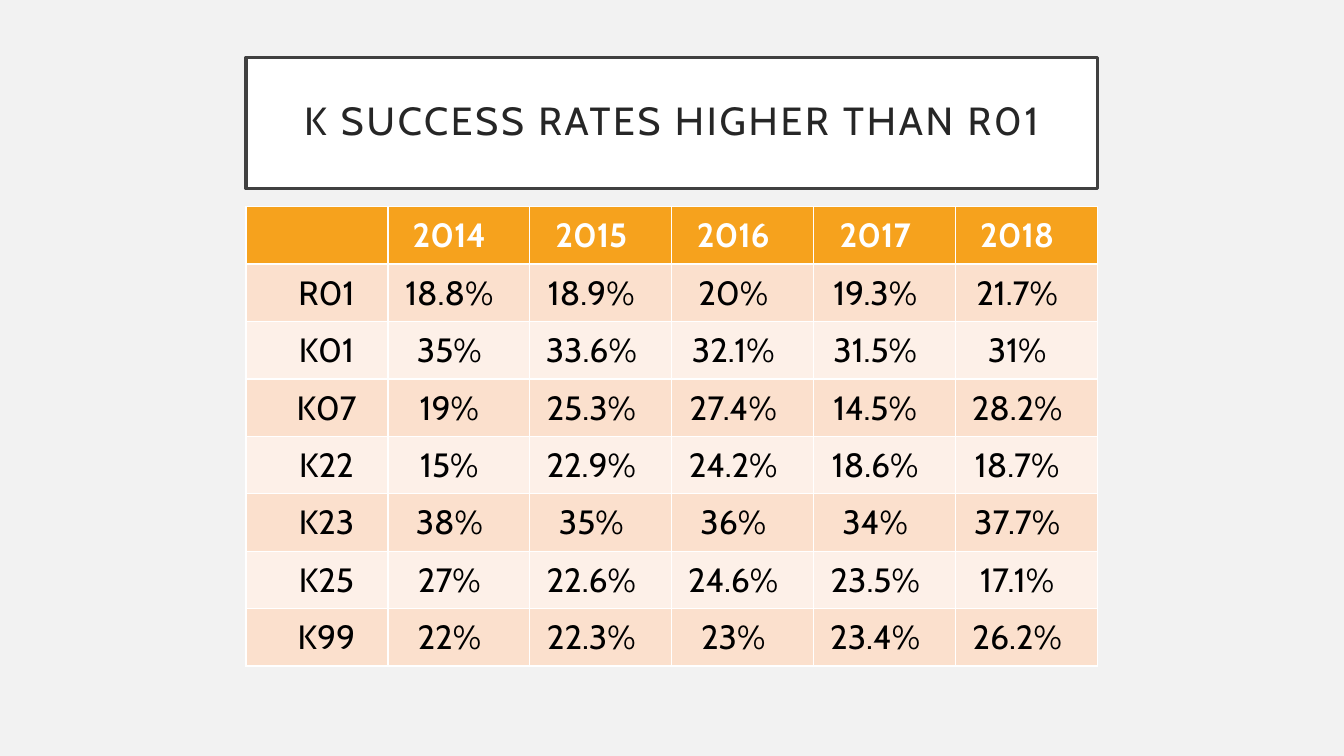
import pptx
import pptx.util
import pptx.dml.color
import pptx.enum.text

Pt = pptx.util.Pt
RGBColor = pptx.dml.color.RGBColor
PP_ALIGN = pptx.enum.text.PP_ALIGN
MSO_ANCHOR = pptx.enum.text.MSO_ANCHOR

BACKGROUND = RGBColor(0xF2, 0xF2, 0xF2)
WHITE = RGBColor(0xFF, 0xFF, 0xFF)
BLACK = RGBColor(0x00, 0x00, 0x00)
TITLE_LINE = RGBColor(0x40, 0x40, 0x40)
TITLE_TEXT = RGBColor(0x26, 0x26, 0x26)
HEADER_FILL = RGBColor(0xF6, 0xA2, 0x1D)
BAND_FILLS = (RGBColor(0xFB, 0xE0, 0xCD), RGBColor(0xFD, 0xF0, 0xE8))

LEFT, WIDTH = 175.68, 608.4

SUCCESS_RATES = [
    ["", "2014", "2015", "2016", "2017", "2018"],
    ["R01", "18.8%", "18.9%", "20%", "19.3%", "21.7%"],
    ["K01", "35%", "33.6%", "32.1%", "31.5%", "31%"],
    ["K07", "19%", "25.3%", "27.4%", "14.5%", "28.2%"],
    ["K22", "15%", "22.9%", "24.2%", "18.6%", "18.7%"],
    ["K23", "38%", "35%", "36%", "34%", "37.7%"],
    ["K25", "27%", "22.6%", "24.6%", "23.5%", "17.1%"],
    ["K99", "22%", "22.3%", "23%", "23.4%", "26.2%"],
]


class SlideBuilder:
    """Holds the text style and the current slide."""

    font_name = "Cabin"

    def __init__(self, slide):
        self.slide = slide
        slide.background.fill.solid()
        slide.background.fill.fore_color.rgb = BACKGROUND

    def format_text(self, paragraph, size, color, bold=False, spacing=0):
        paragraph.alignment = PP_ALIGN.CENTER
        for run in paragraph.runs:
            run.font.name = self.font_name
            run.font.size = Pt(size)
            run.font.bold = bold
            run.font.color.rgb = color
            if spacing:
                run.font._element.set("spc", str(spacing * 100))

    def title(self, text, top, height):
        shape = self.slide.shapes.title
        shape.left, shape.top = Pt(LEFT), Pt(top)
        shape.width, shape.height = Pt(WIDTH), Pt(height)
        shape.fill.solid()
        shape.fill.fore_color.rgb = WHITE
        shape.line.color.rgb = TITLE_LINE
        shape.line.width = Pt(2.5)
        frame = shape.text_frame
        frame.text = text
        frame.word_wrap = True
        frame.auto_size = pptx.enum.text.MSO_AUTO_SIZE.NONE
        frame.vertical_anchor = MSO_ANCHOR.MIDDLE
        frame.margin_left = frame.margin_right = Pt(14.4)
        frame.margin_top = frame.margin_bottom = Pt(14.4)
        frame.paragraphs[0].line_spacing = 0.9
        self.format_text(frame.paragraphs[0], 28, TITLE_TEXT, spacing=2)

    def table(self, rows, top, height):
        # The default table style supplies the white rules
        table = self.slide.shapes.add_table(
            len(rows), len(rows[0]), Pt(LEFT), Pt(top), Pt(WIDTH), Pt(height)
        ).table
        for row_index, row in enumerate(rows):
            for column_index, text in enumerate(row):
                self.cell(table.cell(row_index, column_index), text,
                          row_index, column_index)

    def cell(self, cell, text, row_index, column_index):
        is_header = row_index == 0
        is_label = column_index == 0
        cell.fill.solid()
        cell.fill.fore_color.rgb = (
            HEADER_FILL if is_header else BAND_FILLS[(row_index - 1) % 2])
        cell.vertical_anchor = MSO_ANCHOR.MIDDLE
        cell.margin_left = Pt(14.4 if is_label else 0.72)
        cell.margin_right = Pt(0.72 if is_label else 14.4)
        cell.margin_top, cell.margin_bottom = Pt(0.72), Pt(0)
        cell.text_frame.text = text
        self.format_text(cell.text_frame.paragraphs[0], 24,
                         WHITE if is_header else BLACK, bold=is_header)


def main():
    presentation = pptx.Presentation()
    presentation.slide_width = Pt(960)
    presentation.slide_height = Pt(540)
    title_only = presentation.slide_layouts[5]
    builder = SlideBuilder(presentation.slides.add_slide(title_only))

    # Framed title
    builder.title("K SUCCESS RATES HIGHER THAN R01", top=41.04, height=93.6)

    # Success rates by award and year
    builder.table(SUCCESS_RATES, top=147.6, height=328.32)

    presentation.save("out.pptx")


if __name__ == "__main__":
    main()
